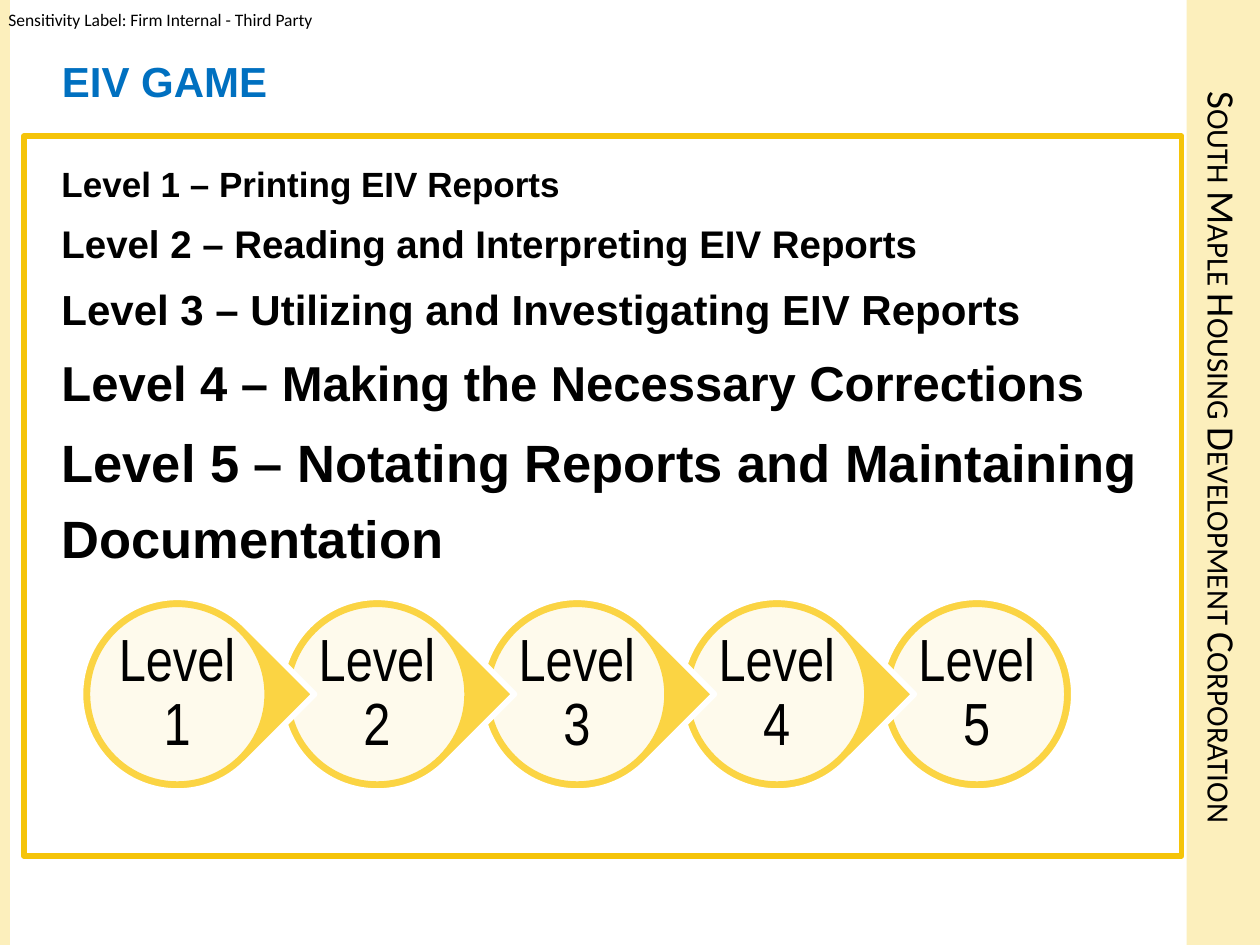
import pptx
import pptx.util
import pptx.dml.color
import pptx.enum.shapes
import pptx.enum.text
import pptx.oxml.ns
import lxml.etree

Cm, Pt = pptx.util.Cm, pptx.util.Pt
kinds = pptx.enum.shapes.MSO_SHAPE
align = pptx.enum.text.PP_ALIGN
anchor = pptx.enum.text.MSO_ANCHOR
rgb = pptx.dml.color.RGBColor.from_string

deck = pptx.Presentation()
deck.slide_width, deck.slide_height = Cm(25.4), Cm(19.05)
slide = deck.slides.add_slide(deck.slide_layouts[6])


def draw(kind, left, top, width, height, fill, line=None):
    shape = slide.shapes.add_shape(kind, Cm(left), Cm(top), Cm(width), Cm(height))
    shape.shadow.inherit = False
    shape.fill.solid()
    shape.fill.fore_color.rgb = rgb(fill)
    if line:
        shape.line.color.rgb = rgb(line)
        shape.line.width = Pt(3.35)
    else:
        shape.line.fill.background()
    return shape


def write(para, text, size, face, color="000000", bold=False):
    run = para.add_run()
    run.text = text
    run.font.size = Pt(size)
    run.font.name = face
    run.font.bold = bold
    run.font.color.rgb = rgb(color)
    return run


# Side bands
draw(kinds.RECTANGLE, 23.92, 0, 1.48, 19.05, "FCEFBC")
draw(kinds.RECTANGLE, 0, 0, 0.2, 19.05, "FCEFBC")

# Label and title
for text, left, top, width, height, size, face, color, bold in (
    ("Sensitivity Label: Firm Internal - Third Party",
     0.17, 0.18, 6.25, 0.43, 10, "Calibri", "000000", False),
    ("EIV GAME", 1.25, 1.12, 22.6, 1.3, 24, "Arial", "0070C0", True),
):
    box = slide.shapes.add_textbox(Cm(left), Cm(top), Cm(width), Cm(height))
    frame = box.text_frame
    frame.word_wrap = True
    frame.margin_left = frame.margin_right = 0
    frame.margin_top = frame.margin_bottom = 0
    write(frame.paragraphs[0], text, size, face, color, bold)

# Company name down the right band
box = slide.shapes.add_textbox(Cm(23.92), Cm(1.07), Cm(1.48), Cm(16.3))
frame = box.text_frame
frame.word_wrap = True
frame.vertical_anchor = anchor.MIDDLE
frame._txBody.find(pptx.oxml.ns.qn("a:bodyPr")).set("vert", "vert")
para = frame.paragraphs[0]
para.alignment = align.CENTER
run = write(para, "South Maple Housing Development Corporation", 22.2, "Calibri")
run._r.get_or_add_rPr().set("cap", "small")

# Framed list of levels
panel = draw(kinds.RECTANGLE, 0.48, 2.75, 23.34, 14.5, "FFFFFF", "F5C409")
frame = panel.text_frame
frame.word_wrap = True
frame.vertical_anchor = anchor.TOP
frame.margin_left, frame.margin_top = Cm(0.76), Cm(0.36)
levels = (
    ("Printing EIV Reports", 20),
    ("Reading and Interpreting EIV Reports", 22),
    ("Utilizing and Investigating EIV Reports", 24),
    ("Making the Necessary Corrections", 28),
    ("Notating Reports and Maintaining Documentation", 30),
)
for num, (text, size) in enumerate(levels, 1):
    para = frame.paragraphs[0] if num == 1 else frame.add_paragraph()
    para.alignment = align.LEFT
    para.line_spacing = 1.2
    para.space_before = Pt(0 if num == 1 else 3.8)
    write(para, f"Level {num} – {text}", size, "Arial", bold=True)

# Chain of circles, last one at the back
for num in range(5, 0, -1):
    left, top = 1.62 + 4.03 * (num - 1), 12.04
    kind = kinds.OVAL if num == 5 else kinds.TEAR
    drop = draw(kind, left, top, 3.91, 3.91, "FBD443", "FFFFFF")
    if num < 5:
        drop.rotation = 45
        drop.adjustments[0] = 1

    disc = draw(kinds.OVAL, left + 0.14, top + 0.14, 3.63, 3.63, "FFFFFF", "FBD443")
    tint = disc.fill._xPr.find(pptx.oxml.ns.qn("a:solidFill"))[0]
    lxml.etree.SubElement(tint, pptx.oxml.ns.qn("a:alpha")).set("val", "90000")

    box = slide.shapes.add_textbox(Cm(left + 0.65), Cm(top + 0.65), Cm(2.6), Cm(2.6))
    frame = box.text_frame
    frame.word_wrap = True
    frame.vertical_anchor = anchor.MIDDLE
    frame.margin_left = frame.margin_right = Cm(0.1)
    frame.margin_top = frame.margin_bottom = Cm(0.1)
    para = frame.paragraphs[0]
    para.alignment = align.CENTER
    para.line_spacing = 0.9
    write(para, f"Level {num}", 34, "Arial Narrow")

deck.save("out.pptx")
